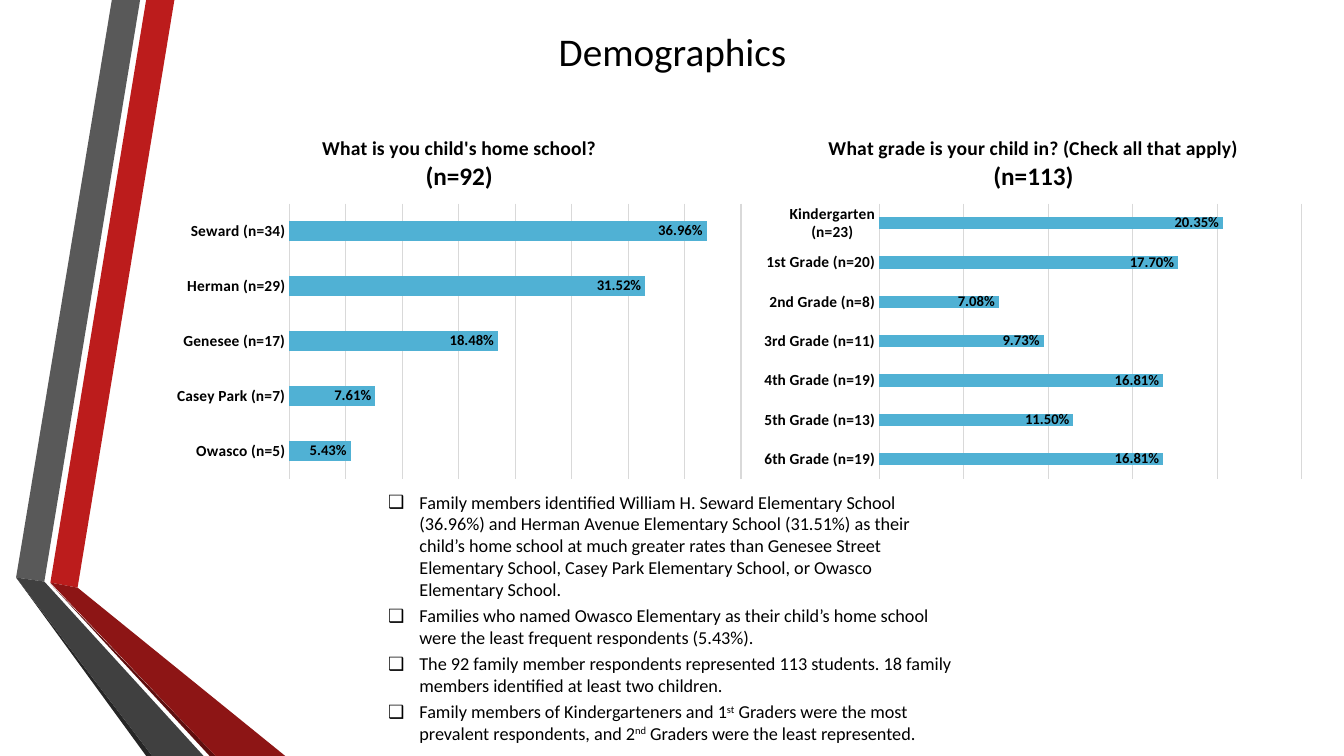
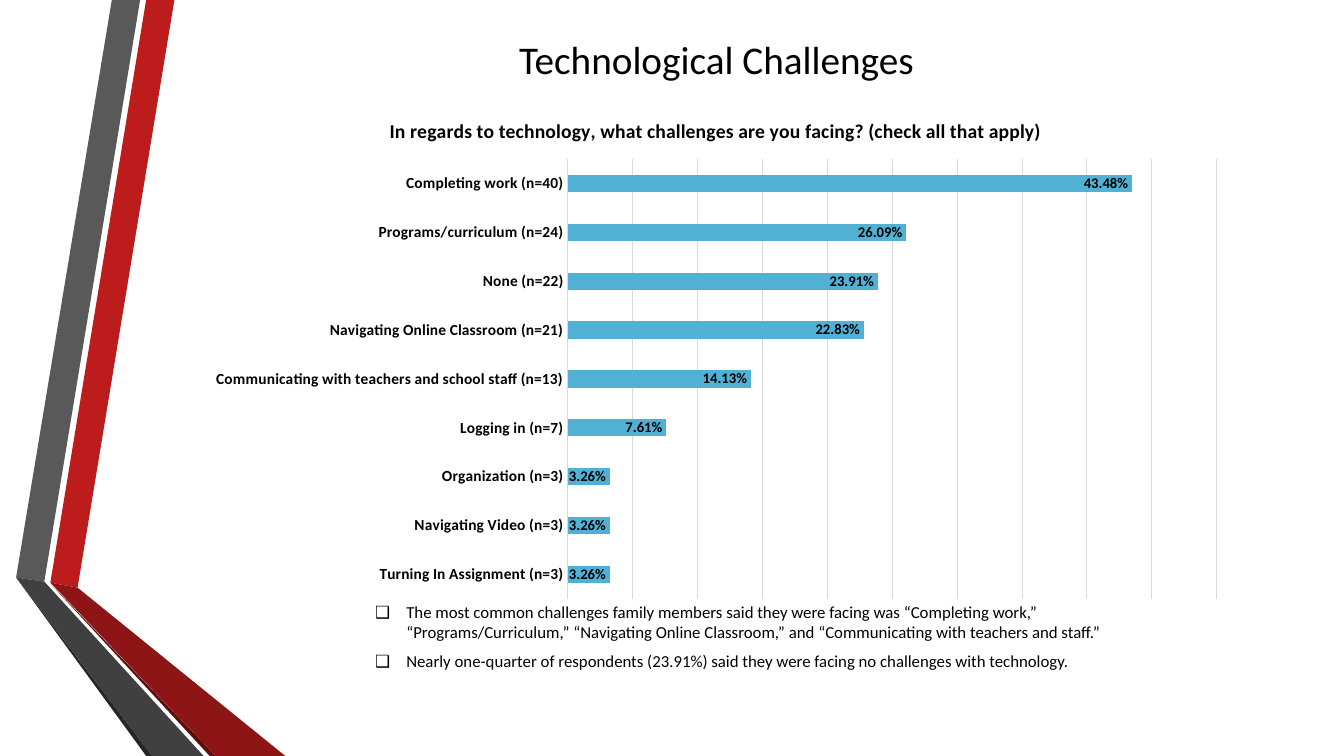
from lxml.etree import SubElement
from pptx import Presentation
from pptx.chart.data import CategoryChartData
from pptx.dml.color import RGBColor
from pptx.enum.chart import XL_CHART_TYPE, XL_LABEL_POSITION, XL_TICK_MARK
from pptx.enum.text import MSO_ANCHOR, MSO_AUTO_SIZE, PP_ALIGN
from pptx.oxml import parse_xml
from pptx.oxml.ns import nsdecls, qn
from pptx.util import Inches, Pt

FONT = "Calibri"
TEXT = "000000"
GRID = "D9D9D9"
BAR = "50B1D4"
PERCENT = "0.00%"
BANDS = [
    ("BC1C1C", [(0.5, 5.78), (0.77, 5.83), (1.73, 0), (1.45, 0)]),
    ("595959", [(1.39, 0), (1.11, 0), (0.16, 5.73), (0.44, 5.77)]),
    ("262626", [(0.16, 5.73), (1.45, 7.5), (1.51, 7.5)]),
    ("5E0E0E", [(0.5, 5.79), (2.08, 7.5), (2.14, 7.5)]),
    ("8D1515", [(0.5, 5.78), (2.14, 7.5), (2.83, 7.5), (0.77, 5.83)]),
    ("404040", [(2.02, 7.5), (0.44, 5.77), (0.16, 5.73), (1.51, 7.5)]),
]


def color(value):
    return RGBColor.from_string(value)


def style_font(font, size, bold=False):
    font.name = FONT
    font.size = Pt(size)
    font.bold = bold
    font.color.rgb = color(TEXT)


def write(paragraph, text, size=12, bold=False, superscript=False):
    run = paragraph.add_run()
    run.text = text
    style_font(run.font, size, bold)
    if superscript:
        run._r.get_or_add_rPr().set("baseline", "30000")


def style_line(line):
    line.color.rgb = color(GRID)
    line.width = Pt(0.75)


def place(shape, box):
    shape.left, shape.top, shape.width, shape.height = map(Inches, box)


class SurveyDeck:
    """Holds the survey style and the slide being filled."""

    def __init__(self):
        self.presentation = Presentation()
        self.presentation.slide_width = Inches(13.33)
        self.presentation.slide_height = Inches(7.5)
        self.slide = None

    def add_slide(self):
        layout = self.presentation.slide_layouts[1]
        self.slide = self.presentation.slides.add_slide(layout)
        for fill, points in BANDS:
            self.band(fill, points)

    def band(self, fill, points):
        start, *others = [(Inches(x), Inches(y)) for x, y in points]
        builder = self.slide.shapes.build_freeform(*start)
        builder.add_line_segments(others, close=True)
        shape = builder.convert_to_shape()
        shape.shadow.inherit = False
        shape.fill.solid()
        shape.fill.fore_color.rgb = color(fill)
        shape.line.fill.background()

    def title(self, text, box, anchor):
        shape = self.slide.shapes.title
        place(shape, box)
        frame = shape.text_frame
        frame.auto_size = MSO_AUTO_SIZE.NONE
        frame.vertical_anchor = anchor
        paragraph = frame.paragraphs[0]
        paragraph.alignment = PP_ALIGN.CENTER
        write(paragraph, text, size=28)

    def bullets(self, items, box, size, gap):
        """Fills the body list; text between bars is superscript."""
        shape = self.slide.placeholders[1]
        place(shape, box)
        frame = shape.text_frame
        frame.word_wrap = True
        frame.auto_size = MSO_AUTO_SIZE.NONE
        frame.vertical_anchor = MSO_ANCHOR.TOP
        for index, item in enumerate(items):
            paragraph = frame.add_paragraph() if index else frame.paragraphs[0]
            paragraph.space_before = Pt(0)
            paragraph.space_after = Pt(gap)
            properties = paragraph._p.get_or_add_pPr()
            properties.set("marL", str(Inches(0.31)))
            properties.set("indent", str(-Inches(0.31)))
            SubElement(properties, qn("a:buFont"), typeface="Wingdings")
            properties[-1].set("typeface", "Segoe UI Symbol")
            SubElement(properties, qn("a:buChar"), char="❑")
            for part, text in enumerate(item.split("|")):
                write(paragraph, text, size=size, superscript=part % 2 == 1)

    def bar_chart(self, heading, answers, box, plot_box, maximum, gap=182):
        data = CategoryChartData(number_format=PERCENT)
        data.categories = [name for name, value in answers]
        data.add_series("Series 1", [value / 100 for name, value in answers])
        chart = self.slide.shapes.add_chart(
            XL_CHART_TYPE.BAR_CLUSTERED, *map(Inches, box), data).chart
        style_font(chart.font, 10)
        chart.has_legend = False
        self.chart_title(chart, heading)
        self.chart_axes(chart, maximum)
        plot = chart.plots[0]
        plot.gap_width = gap
        plot.vary_by_categories = False
        series = plot.series[0]
        series.format.fill.solid()
        series.format.fill.fore_color.rgb = color(BAR)
        plot.has_data_labels = True
        labels = plot.data_labels
        labels.show_value = True
        labels.position = XL_LABEL_POSITION.INSIDE_END
        labels.number_format = PERCENT
        labels.number_format_is_linked = False
        style_font(labels.font, 10.5, bold=True)
        self.plot_layout(chart, box, plot_box)

    def chart_title(self, chart, heading):
        frame = chart.chart_title.text_frame
        for index, (text, size) in enumerate(heading):
            paragraph = frame.add_paragraph() if index else frame.paragraphs[0]
            write(paragraph, text, size=size, bold=True)

    def chart_axes(self, chart, maximum):
        categories = chart.category_axis
        categories.major_tick_mark = XL_TICK_MARK.NONE
        categories.has_major_gridlines = False
        style_font(categories.tick_labels.font, 11, bold=True)
        style_line(categories.format.line)
        values = chart.value_axis
        values.visible = False
        values.minimum_scale = 0
        values.maximum_scale = maximum
        values.major_unit = 0.05
        values.has_major_gridlines = True
        style_line(values.major_gridlines.format.line)

    def plot_layout(self, chart, box, plot_box):
        """Fixes the inner plot area, given in slide inches."""
        left, top, width, height = box
        x, y, w, h = plot_box
        fractions = {"x": (x - left) / width, "y": (y - top) / height,
                     "w": w / width, "h": h / height}
        area = chart._chartSpace.find(".//" + qn("c:plotArea"))
        for layout in area.findall(qn("c:layout")):
            area.remove(layout)
        layout = parse_xml(f"<c:layout {nsdecls('c')}/>")
        manual = SubElement(layout, qn("c:manualLayout"))
        SubElement(manual, qn("c:layoutTarget"), val="inner")
        for name in "xy":
            SubElement(manual, qn(f"c:{name}Mode"), val="edge")
        for name, fraction in fractions.items():
            SubElement(manual, qn(f"c:{name}"), val=f"{fraction:.4f}")
        area.insert(0, layout)


def demographics(deck):
    deck.add_slide()
    deck.title("Demographics", (1.29, 0.06, 10.76, 0.73), MSO_ANCHOR.BOTTOM)
    deck.bullets([
        "Family members identified William H. Seward Elementary School (36.96%) "
        "and Herman Avenue Elementary School (31.51%) as their child’s home "
        "school at much greater rates than Genesee Street Elementary School, "
        "Casey Park Elementary School, or Owasco Elementary School.",
        "Families who named Owasco Elementary as their child’s home school were "
        "the least frequent respondents (5.43%).",
        "The 92 family member respondents represented 113 students. 18 family "
        "members identified at least two children.",
        "Family members of Kindergarteners and 1|st| Graders were the most "
        "prevalent respondents, and 2|nd| Graders were the least represented.",
    ], (3.75, 4.82, 5.83, 2.68), size=13, gap=3)
    deck.bar_chart(
        [("What is you child's home school?", 14), ("(n=92)", 18)],
        [("Owasco (n=5)", 5.43), ("Casey Park (n=7)", 7.61),
         ("Genesee (n=17)", 18.48), ("Herman (n=29)", 31.52),
         ("Seward (n=34)", 36.96)],
        (1.64, 1.18, 5.83, 3.64), (2.87, 2.02, 4.48, 2.73), maximum=0.4)
    deck.bar_chart(
        [("What grade is your child in? (Check all that apply)", 14),
         ("(n=113)", 18)],
        [("6th Grade (n=19)", 16.81), ("5th Grade (n=13)", 11.5),
         ("4th Grade (n=19)", 16.81), ("3rd Grade (n=11)", 9.73),
         ("2nd Grade (n=8)", 7.08), ("1st Grade (n=20)", 17.7),
         ("Kindergarten (n=23)", 20.35)],
        (7.47, 1.18, 5.56, 3.64), (8.72, 2.02, 4.19, 2.73), maximum=0.25,
        gap=219)


def technological_challenges(deck):
    deck.add_slide()
    deck.title("Technological Challenges", (0.88, 0.23, 12.45, 0.71),
               MSO_ANCHOR.MIDDLE)
    deck.bullets([
        "The most common challenges family members said they were facing was "
        "“Completing work,” “Programs/Curriculum,” “Navigating Online "
        "Classroom,” and “Communicating with teachers and staff.”",
        "Nearly one-quarter of respondents (23.91%) said they were facing no "
        "challenges with technology.",
    ], (3.62, 5.92, 7.78, 0.79), size=12, gap=6)
    deck.bar_chart(
        [("In regards to technology, what challenges are you facing? "
          "(check all that apply)", 14)],
        [("Turning In Assignment (n=3)", 3.26),
         ("Navigating Video (n=3)", 3.26), ("Organization (n=3)", 3.26),
         ("Logging in (n=7)", 7.61),
         ("Communicating with teachers and school staff (n=13)", 14.13),
         ("Navigating Online Classroom (n=21)", 22.83), ("None (n=22)", 23.91),
         ("Programs/curriculum (n=24)", 26.09),
         ("Completing work (n=40)", 43.48)],
        (1.93, 0.97, 10.34, 5.08), (5.63, 1.58, 6.44, 4.36), maximum=0.5)


def main():
    deck = SurveyDeck()
    demographics(deck)
    technological_challenges(deck)
    deck.presentation.save("out.pptx")


if __name__ == "__main__":
    main()
